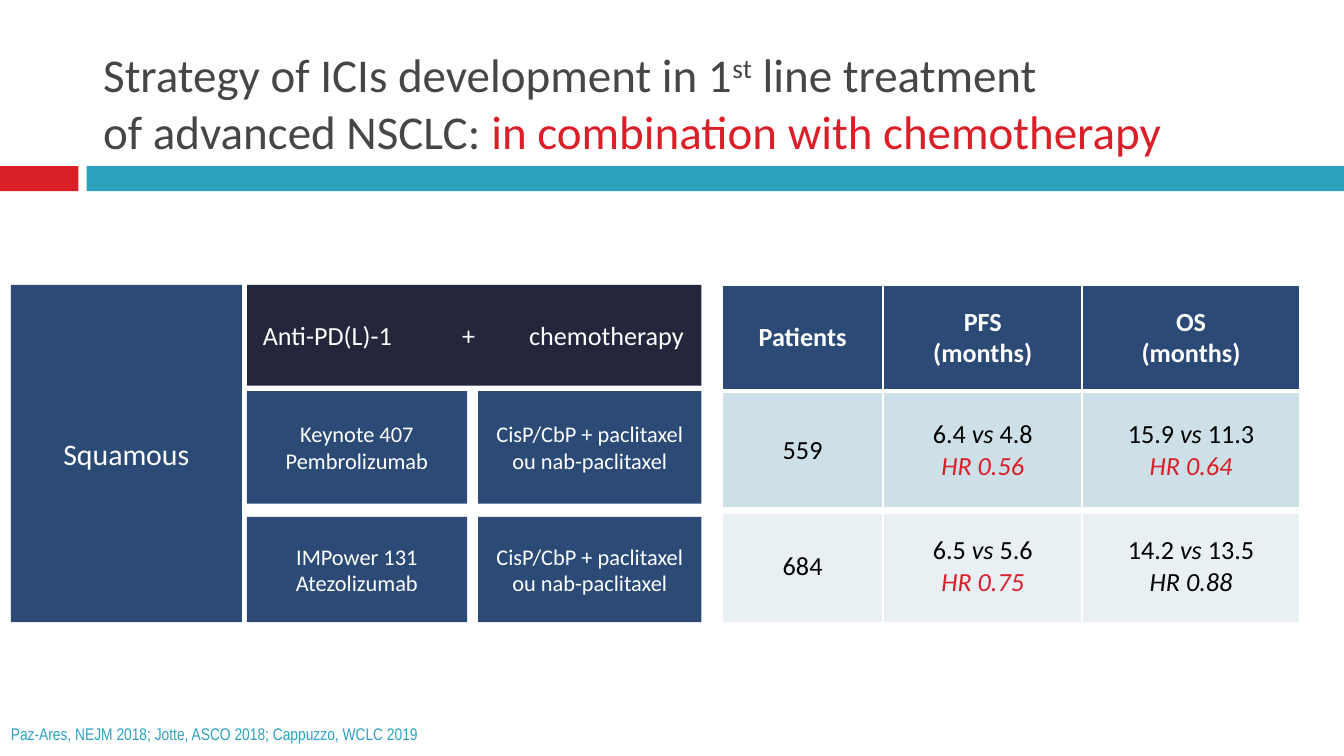
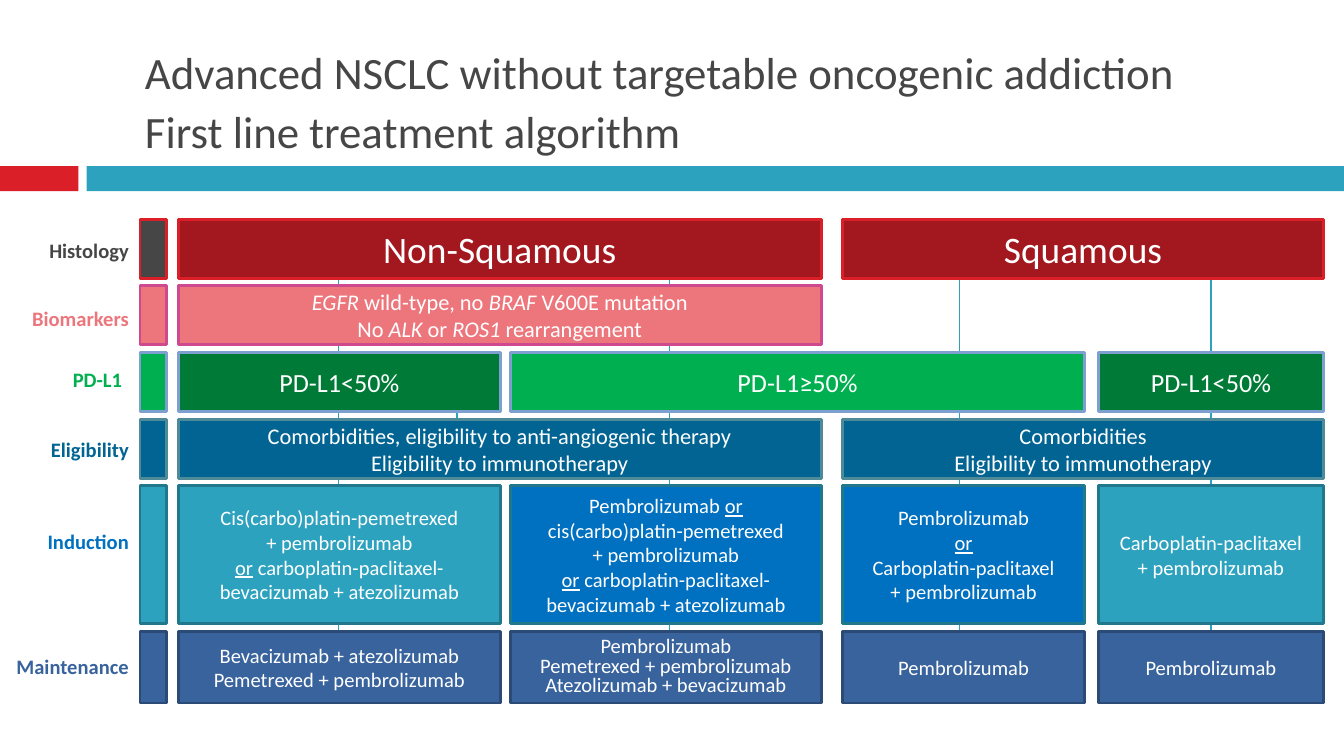
from dataclasses import dataclass
from typing import NamedTuple, Optional

from lxml.etree import SubElement
from pptx import Presentation
from pptx.dml.color import RGBColor
from pptx.enum.shapes import MSO_CONNECTOR, MSO_SHAPE
from pptx.enum.text import MSO_ANCHOR, PP_ALIGN
from pptx.oxml.ns import qn
from pptx.util import Pt


@dataclass(frozen=True)
class Theme:
    white: str = "FFFFFF"
    black: str = "000000"
    grey: str = "464646"
    red: str = "DA1F28"
    dark_red: str = "A3171E"
    salmon: str = "EC767C"
    pink: str = "CF498F"
    teal: str = "2DA2BF"
    dark_teal: str = "21788D"
    grey_teal: str = "4F8A99"
    navy: str = "2B4A76"
    midnight: str = "24263C"
    petrol: str = "026493"
    blue: str = "0070C0"
    steel: str = "39639D"
    pale_blue: str = "7DA0D0"
    green: str = "00B050"
    dark_green: str = "007A37"
    table_dark: str = "CDE0E8"
    table_light: str = "E8F0F4"
    font: str = "Calibri"
    note_font: str = "Arial Narrow"
    title_large: float = 25.2
    title: float = 24
    heading: float = 20
    group: float = 16
    body: float = 14
    detail: float = 12
    small: float = 11
    note: float = 9


T = Theme()


class Box(NamedTuple):
    left: float
    top: float
    width: float
    height: float


class Style(NamedTuple):
    size: float
    color: str = T.white
    bold: bool = False
    align: PP_ALIGN = PP_ALIGN.CENTER
    spacing: Optional[float] = None
    font: str = T.font


class Insets(NamedTuple):
    left: float = 7.2
    top: float = 3.6
    right: float = 7.2
    bottom: float = 3.6


class Cell(NamedTuple):
    """A box of the algorithm, spanning the columns first to last."""
    first: int
    last: int
    lines: list[str]
    fill: str
    spacing: Optional[float] = None


@dataclass(frozen=True)
class Step:
    label: str
    label_box: Box
    label_color: str
    marker: str
    border: str
    top: float
    height: float
    size: float
    cells: list[Cell]


DEFAULT_INSETS = Insets()
WIDE_INSETS = Insets(9.4, 5, 9.4, 5)
LABEL_INSETS = Insets(0, 5, 9.4, 5)
COLUMNS = [(95.5, 268.3), (273.6, 440), (451.5, 581), (588.5, 709)]
LABEL_H = 23


def label_box(top: float, right: float = 78.5) -> Box:
    return Box(0, top, right, LABEL_H)


CARBO_BEVA = "_or| carboplatin-paclitaxel-bevacizumab + atezolizumab"
STEPS = [
    Step("Histology", label_box(122.4), T.grey, T.grey, T.red, 117.4, 31.7, T.heading, [
        Cell(0, 1, ["Non-Squamous"], T.dark_red),
        Cell(2, 3, ["Squamous"], T.dark_red)]),
    Step("Biomarkers", label_box(159.1), T.salmon, T.salmon, T.pink, 152.8, 31.7, T.detail, [
        Cell(0, 1, ["*EGFR |wild-type, no |*BRAF| V600E mutation",
                    "No |*ALK| or |*ROS1 |rearrangement"], T.salmon)]),
    Step("PD-L1", label_box(191.5, 74.9), T.green, T.green, T.pale_blue, 188.8, 31.7, T.body, [
        Cell(0, 0, ["PD-L1<50%"], T.dark_green),
        Cell(1, 2, ["PD-L1≥50%"], T.green),
        Cell(3, 3, ["PD-L1<50%"], T.dark_green)]),
    Step("Eligibility", label_box(229), T.petrol, T.petrol, T.grey_teal, 224.8, 31.7, T.detail, [
        Cell(0, 1, ["Comorbidities, eligibility to anti-angiogenic therapy",
                    "Eligibility to immunotherapy"], T.petrol),
        Cell(2, 3, ["Comorbidities", "Eligibility to immunotherapy"], T.petrol)]),
    Step("Induction", label_box(278.6), T.blue, T.teal, T.dark_teal, 260.2, 74, T.small, [
        Cell(0, 0, ["Cis(carbo)platin-pemetrexed", "+ pembrolizumab", CARBO_BEVA], T.teal),
        Cell(1, 1, ["Pembrolizumab |_or", "cis(carbo)platin-pemetrexed",
                    "+ pembrolizumab", CARBO_BEVA], T.blue),
        Cell(2, 2, ["Pembrolizumab", "_or", "Carboplatin-paclitaxel", "+ pembrolizumab"], T.blue),
        Cell(3, 3, ["Carboplatin-paclitaxel", "+ pembrolizumab"], T.teal)]),
    Step("Maintenance", label_box(345.6), T.steel, T.steel, T.navy, 338.2, 38.5, T.small, [
        Cell(0, 0, ["Bevacizumab + atezolizumab", "Pemetrexed + pembrolizumab"], T.steel),
        Cell(1, 1, ["Pembrolizumab", "Pemetrexed + pembrolizumab",
                    "Atezolizumab + bevacizumab"], T.steel, 0.8),
        Cell(2, 2, ["Pembrolizumab"], T.steel),
        Cell(3, 3, ["Pembrolizumab"], T.steel)]),
]

# x, top and bottom of each arrow running behind the boxes
ARROWS = [(648.7, 149, 352), (514.1, 149, 358.6), (358.6, 139, 360.7),
          (244.8, 204.5, 253.4), (181.4, 139, 358.6)]

RESULTS = [
    [["Patients"], ["PFS", "(months)"], ["OS", "(months)"]],
    [["559"], ["6.4 |*vs| 4.8", "!*HR 0.56"], ["15.9 |*vs| 11.3", "!*HR 0.64"]],
    [["684"], ["6.5 |*vs| 5.6", "!*HR 0.75"], ["14.2 |*vs |13.5", "*HR 0.88"]],
]
TRIALS = [["Keynote 407", "Pembrolizumab"], ["IMPower 131", "Atezolizumab"]]
CHEMO = ["CisP/CbP + paclitaxel", "ou nab-paclitaxel"]


def rgb(color: str) -> RGBColor:
    return RGBColor.from_string(color)


def write(tf, lines: list[str], style: Style) -> None:
    """Fill a text frame; | parts runs, led by * italic, _ underline, ^ superscript or ! red."""
    for i, line in enumerate(lines):
        p = tf.paragraphs[0] if i == 0 else tf.add_paragraph()
        p.alignment = style.align
        if style.spacing:
            p.line_spacing = style.spacing
        for part in line.split("|"):
            if part == "\n":
                p.add_line_break()
                continue
            text = part.lstrip("*_^!")
            marks = part[:len(part) - len(text)]
            r = p.add_run()
            r.text = text
            r.font.name, r.font.size = style.font, Pt(style.size)
            r.font.bold = style.bold
            r.font.italic = "*" in marks
            r.font.underline = "_" in marks
            r.font.color.rgb = rgb(T.red if "!" in marks else style.color)
            if "^" in marks:
                r.font._element.set("baseline", "30000")


def frame(tf, insets: Insets, anchor: MSO_ANCHOR, wrap: bool = True) -> None:
    tf.word_wrap = wrap
    tf.vertical_anchor = anchor
    tf.margin_left, tf.margin_top, tf.margin_right, tf.margin_bottom = map(Pt, insets)


def add_box(slide, box: Box, fill: str, lines: Optional[list[str]] = None,
            style: Optional[Style] = None, border: Optional[str] = None,
            insets: Insets = DEFAULT_INSETS):
    sp = slide.shapes.add_shape(MSO_SHAPE.RECTANGLE, *map(Pt, box))
    sp.shadow.inherit = False
    sp.fill.solid()
    sp.fill.fore_color.rgb = rgb(fill)
    if border:
        sp.line.color.rgb = rgb(border)
        sp.line.width = Pt(1.5)
    else:
        sp.line.fill.background()
    if lines and style:
        frame(sp.text_frame, insets, MSO_ANCHOR.MIDDLE)
        write(sp.text_frame, lines, style)
    return sp


def add_text(slide, box: Box, lines: list[str], style: Style, insets: Insets = DEFAULT_INSETS,
             anchor: MSO_ANCHOR = MSO_ANCHOR.BOTTOM, wrap: bool = True) -> None:
    tf = slide.shapes.add_textbox(*map(Pt, box)).text_frame
    frame(tf, insets, anchor, wrap)
    write(tf, lines, style)


def add_arrow(slide, x: float, top: float, bottom: float) -> None:
    line = slide.shapes.add_connector(MSO_CONNECTOR.STRAIGHT, Pt(x), Pt(top), Pt(x), Pt(bottom))
    line.line.color.rgb = rgb(T.teal)
    line.line.width = Pt(0.79)
    SubElement(line.line._get_or_add_ln(), qn("a:tailEnd"), type="triangle")
    SubElement(line._element.spPr, qn("a:effectLst"))


def new_slide(prs):
    """Blank slide with the red and teal band."""
    slide = prs.slides.add_slide(prs.slide_layouts[6])
    add_box(slide, Box(0, 89, 42, 13.5), T.red)
    add_box(slide, Box(46.5, 89, 673.5, 13.5), T.teal)
    return slide


def set_borders(cell, top: float, bottom: float) -> None:
    tc_pr = cell._tc.get_or_add_tcPr()
    for i, (side, width) in enumerate([("L", 1), ("R", 1), ("T", top), ("B", bottom)]):
        ln = SubElement(tc_pr, qn(f"a:ln{side}"), w=str(int(Pt(width))))
        fill = SubElement(ln, qn("a:solidFill"))
        SubElement(fill, qn("a:srgbClr"), val=T.white)
        tc_pr.insert(i, ln)


def add_results(slide) -> None:
    widths, heights = [86.4, 106.6, 116.6], [56.9, 64, 60]
    edges = [1, 3, 4.5, 1]
    fills = [T.navy, T.table_dark, T.table_light]
    table = slide.shapes.add_table(3, 3, Pt(386.8), Pt(152.6), Pt(sum(widths)),
                                   Pt(sum(heights))).table
    table.horz_banding = False
    for column, width in zip(table.columns, widths):
        column.width = Pt(width)
    for i, row in enumerate(table.rows):
        row.height = Pt(heights[i])
        style = Style(T.body, T.black if i else T.white, bold=i == 0)
        for cell, lines in zip(row.cells, RESULTS[i]):
            cell.fill.solid()
            cell.fill.fore_color.rgb = rgb(fills[i])
            cell.vertical_anchor = MSO_ANCHOR.MIDDLE
            set_borders(cell, edges[i], edges[i + 1])
            write(cell.text_frame, lines, style)


def add_combination_header(slide) -> None:
    sp = add_box(slide, Box(132.4, 152.6, 243.4, 54), T.midnight,
                 ["Anti-PD(L)-1\t+\tchemotherapy"], Style(T.body, align=PP_ALIGN.LEFT),
                 insets=Insets(8.4, 3.6, 8.4, 3.6))
    tabs = SubElement(sp.text_frame.paragraphs[0]._p.get_or_add_pPr(), qn("a:tabLst"))
    for position, align in [(110.3, "ctr"), (225.6, "r")]:
        SubElement(tabs, qn("a:tab"), pos=str(int(Pt(position))), algn=align)


def build_combination(prs) -> None:
    slide = new_slide(prs)
    add_text(slide, Box(48.2, 9.4, 642.2, 79.2),
             ["Strategy of ICIs development in 1|^st| line treatment|\n|"
              "of advanced NSCLC: |!in combination with chemotherapy"],
             Style(T.title_large, T.grey, align=PP_ALIGN.LEFT))
    add_box(slide, Box(5.8, 152.6, 123.8, 180.7), T.navy, ["Squamous"], Style(T.group))
    add_combination_header(slide)
    for trial, (top, height) in zip(TRIALS, [(209.5, 60.3), (277, 56.3)]):
        for lines, (left, width) in zip([trial, CHEMO], [(132.2, 118), (256.2, 119.6)]):
            add_box(slide, Box(left, top, width, height), T.navy, lines, Style(T.detail))
    add_results(slide)
    add_text(slide, Box(0, 386.8, 260.6, 18),
             ["Paz-Ares, NEJM 2018; Jotte, ASCO 2018; Cappuzzo, WCLC 2019"],
             Style(T.note, T.teal, align=PP_ALIGN.LEFT, spacing=0.95, font=T.note_font),
             Insets(5.8, 2.9, 5.8, 5.8))


def build_algorithm(prs) -> None:
    slide = new_slide(prs)
    for arrow in ARROWS:
        add_arrow(slide, *arrow)
    add_text(slide, Box(70.6, 8.6, 620, 79.2),
             ["Advanced NSCLC without targetable oncogenic addiction|\n|"
              "First line treatment algorithm"],
             Style(T.title, T.grey, align=PP_ALIGN.LEFT, spacing=1.1))
    for step in STEPS:
        add_text(slide, step.label_box, [step.label],
                 Style(T.small, step.label_color, bold=True, align=PP_ALIGN.RIGHT),
                 LABEL_INSETS, MSO_ANCHOR.TOP)
        add_box(slide, Box(75, step.top, 14.4, step.height), step.marker, border=step.border)
        for cell in step.cells:
            left, right = COLUMNS[cell.first][0], COLUMNS[cell.last][1]
            add_box(slide, Box(left, step.top, right - left, step.height), cell.fill, cell.lines,
                    Style(step.size, spacing=cell.spacing), step.border, WIDE_INSETS)


def main() -> None:
    prs = Presentation()
    prs.slide_width, prs.slide_height = Pt(720), Pt(405)
    build_combination(prs)
    build_algorithm(prs)
    prs.save("out.pptx")


if __name__ == "__main__":
    main()
